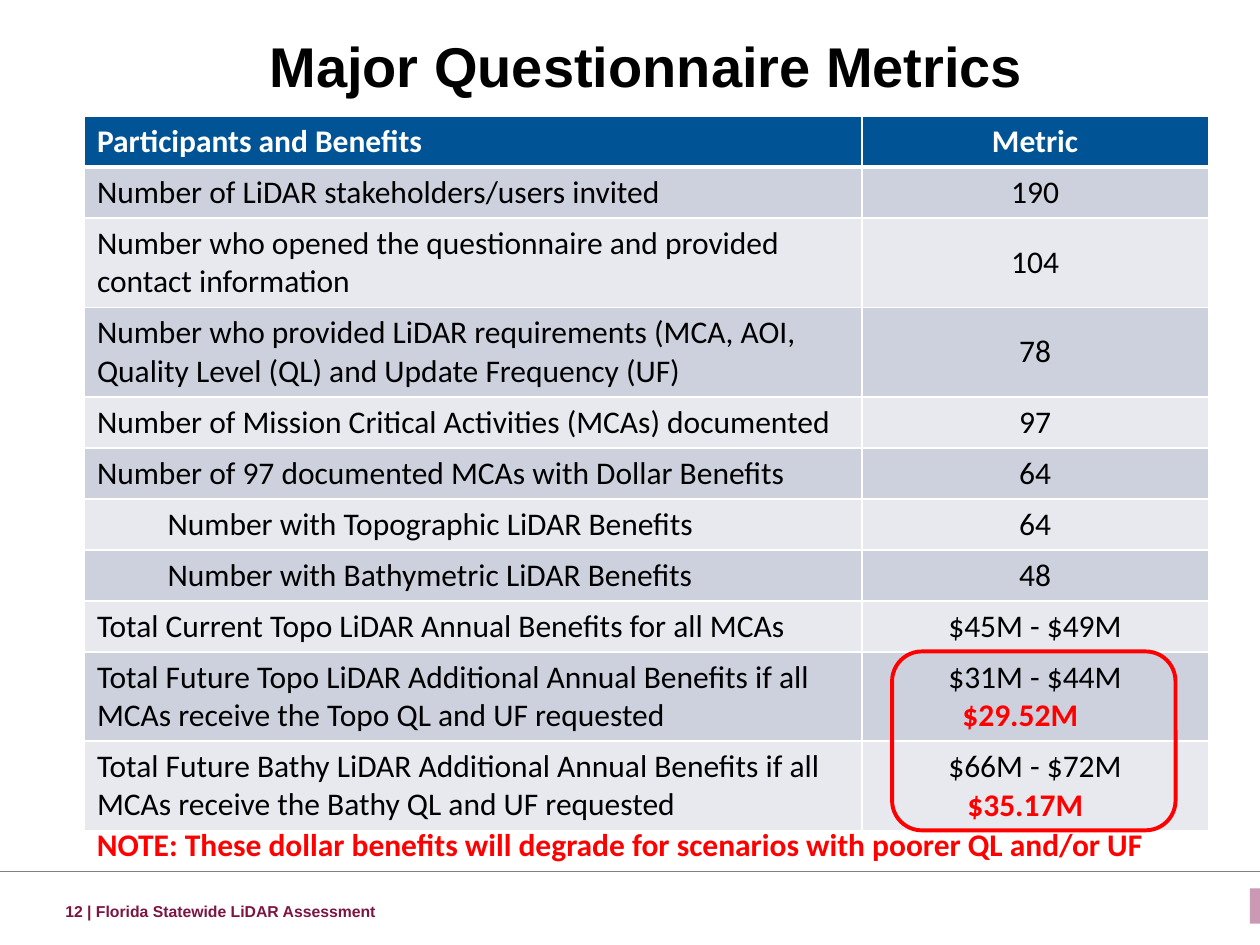
from lxml import etree
from pptx import Presentation
from pptx.dml.color import RGBColor
from pptx.enum.shapes import MSO_CONNECTOR, MSO_SHAPE
from pptx.enum.text import MSO_ANCHOR as ANCHOR, PP_ALIGN as ALIGN
from pptx.oxml import parse_xml
from pptx.oxml.ns import nsdecls, qn
from pptx.util import Inches, Pt

COLORS = {
    "black": "000000", "white": "FFFFFF", "red": "FF0000", "header": "005496",
    "band_dark": "CCD1DD", "band_light": "E7E9EF", "rule": "808080",
    "tab": "CB99B3", "footer": "7D1442",
}
TEXT_SIZE = 18
LINE_HEIGHT = TEXT_SIZE * 1.22 / 72   # inches
CELL_PADDING = 0.1                    # top and bottom together
INDENT = 0.56
REVISED_ROWS = 2                      # last rows leave room for a revised total
# label, metric, lines of text, indent
ROWS = [
    ("Participants and Benefits", "Metric", 1, 0),
    ("Number of LiDAR stakeholders/users invited", "190", 1, 0),
    ("Number who opened the questionnaire and provided contact information",
     "104", 2, 0),
    ("Number who provided LiDAR requirements (MCA, AOI, Quality Level (QL) "
     "and Update Frequency (UF)", "78", 2, 0),
    ("Number of Mission Critical Activities (MCAs) documented", "97", 1, 0),
    ("Number of 97 documented MCAs with Dollar Benefits", "64", 1, 0),
    ("Number with Topographic LiDAR Benefits", "64", 1, INDENT),
    ("Number with Bathymetric LiDAR Benefits", "48", 1, INDENT),
    ("Total Current Topo LiDAR Annual Benefits for all MCAs", "$45M - $49M",
     1, 0),
    ("Total Future Topo LiDAR Additional Annual Benefits if all MCAs receive "
     "the Topo QL and UF requested", "$31M - $44M", 2, 0),
    ("Total Future Bathy LiDAR Additional Annual Benefits if all MCAs receive "
     "the Bathy QL and UF requested", "$66M - $72M", 2, 0),
]


def rgb(name):
    return RGBColor.from_string(COLORS[name])


def add_run(p, text, size, color, bold=True, font="Calibri"):
    r = p.add_run()
    r.text = text
    r.font.name, r.font.size, r.font.bold = font, Pt(size), bold
    r.font.color.rgb = rgb(color)


def add_text(slide, box, text, size, color, font="Calibri",
             align=ALIGN.LEFT, anchor=ANCHOR.TOP):
    tf = slide.shapes.add_textbox(*map(Inches, box)).text_frame
    tf.word_wrap = True
    tf.vertical_anchor = anchor
    p = tf.paragraphs[0]
    p.alignment = align
    add_run(p, text, size, color, font=font)


def set_borders(cell, bottom):
    tc_pr = cell._tc.get_or_add_tcPr()
    widths = {"lnL": 1, "lnR": 1, "lnT": 1, "lnB": bottom}
    for i, (tag, width) in enumerate(widths.items()):
        tc_pr.insert(i, parse_xml(
            f'<a:{tag} {nsdecls("a")} w="{Pt(width)}"><a:solidFill>'
            f'<a:srgbClr val="{COLORS["white"]}"/></a:solidFill></a:{tag}>'))


def add_metrics_table(slide, box):
    left, top, width, height = box
    table = slide.shapes.add_table(len(ROWS), 2, *map(Inches, box)).table
    label_width = 6.17
    table.columns[0].width = Inches(label_width)
    table.columns[1].width = Inches(width - label_width)
    for i, (label, metric, lines, indent) in enumerate(ROWS):
        table.rows[i].height = Inches(CELL_PADDING + lines * LINE_HEIGHT)
        header = i == 0
        revised = i >= len(ROWS) - REVISED_ROWS
        fill = "header" if header else ("band_light", "band_dark")[i % 2]
        for j, text in enumerate((label, metric)):
            cell = table.cell(i, j)
            cell.fill.solid()
            cell.fill.fore_color.rgb = rgb(fill)
            set_borders(cell, 3 if header else 1)
            p = cell.text_frame.paragraphs[0]
            if j == 0:
                cell.margin_left = Inches(0.1 + indent)
            else:
                p.alignment = ALIGN.CENTER
                if not header and not revised:
                    cell.vertical_anchor = ANCHOR.MIDDLE
            add_run(p, text, TEXT_SIZE, "white" if header else "black", header)


def add_callout(slide, box):
    left, top, width, height = box
    sp = slide.shapes.add_shape(MSO_SHAPE.ROUNDED_RECTANGLE, *map(Inches, box))
    sp.shadow.inherit = False
    sp.fill.background()
    sp.line.color.rgb = rgb("red")
    sp.line.width = Pt(2.25)
    # Revised totals under the last two metrics
    for dx, dy, text in ((0.46, 0.3, "$29.52M"), (0.5, 1.01, "$35.17M")):
        add_text(slide, (left + dx, top + dy, 1.33, 0.4), text, TEXT_SIZE,
                 "red")


def add_footer(slide, box):
    left, top, width, height = box
    line = slide.shapes.add_connector(
        MSO_CONNECTOR.STRAIGHT, Inches(left - 0.33), Inches(top),
        Inches(left + width + 0.33), Inches(top))
    line.line.color.rgb = rgb("rule")
    line.line.width = Pt(0.5)
    etree.SubElement(line._element.spPr, qn("a:effectLst"))
    # Tab at the right edge
    tab = slide.shapes.add_shape(
        MSO_SHAPE.RECTANGLE, Inches(left + width - 0.08), Inches(top + 0.13),
        Inches(0.1), Inches(0.28))
    tab.shadow.inherit = False
    tab.fill.solid()
    tab.fill.fore_color.rgb = rgb("tab")
    tab.line.fill.background()
    add_text(slide, (left + 0.42, top + 0.2, 6.17, 0.22),
             "12 | Florida Statewide LiDAR Assessment", 9, "footer", "Arial",
             anchor=ANCHOR.MIDDLE)


def main():
    prs = Presentation()
    prs.slide_width, prs.slide_height = Inches(10), Inches(7.5)
    slide = prs.slides.add_slide(prs.slide_layouts[6])
    add_footer(slide, (0, 6.92, 10, 0.58))
    add_metrics_table(slide, (0.67, 0.92, 8.92, 5.62))
    # Title and note
    add_text(slide, (0.67, 0.17, 8.92, 0.7), "Major Questionnaire Metrics", 32,
             "black", "Arial", ALIGN.CENTER, ANCHOR.MIDDLE)
    add_text(slide, (0.67, 6.5, 8.67, 0.4),
             "NOTE: These dollar benefits will degrade for scenarios with "
             "poorer QL and/or UF", TEXT_SIZE, "red")
    add_callout(slide, (7.08, 5.17, 2.25, 1.42))
    prs.save("out.pptx")


if __name__ == "__main__":
    main()
